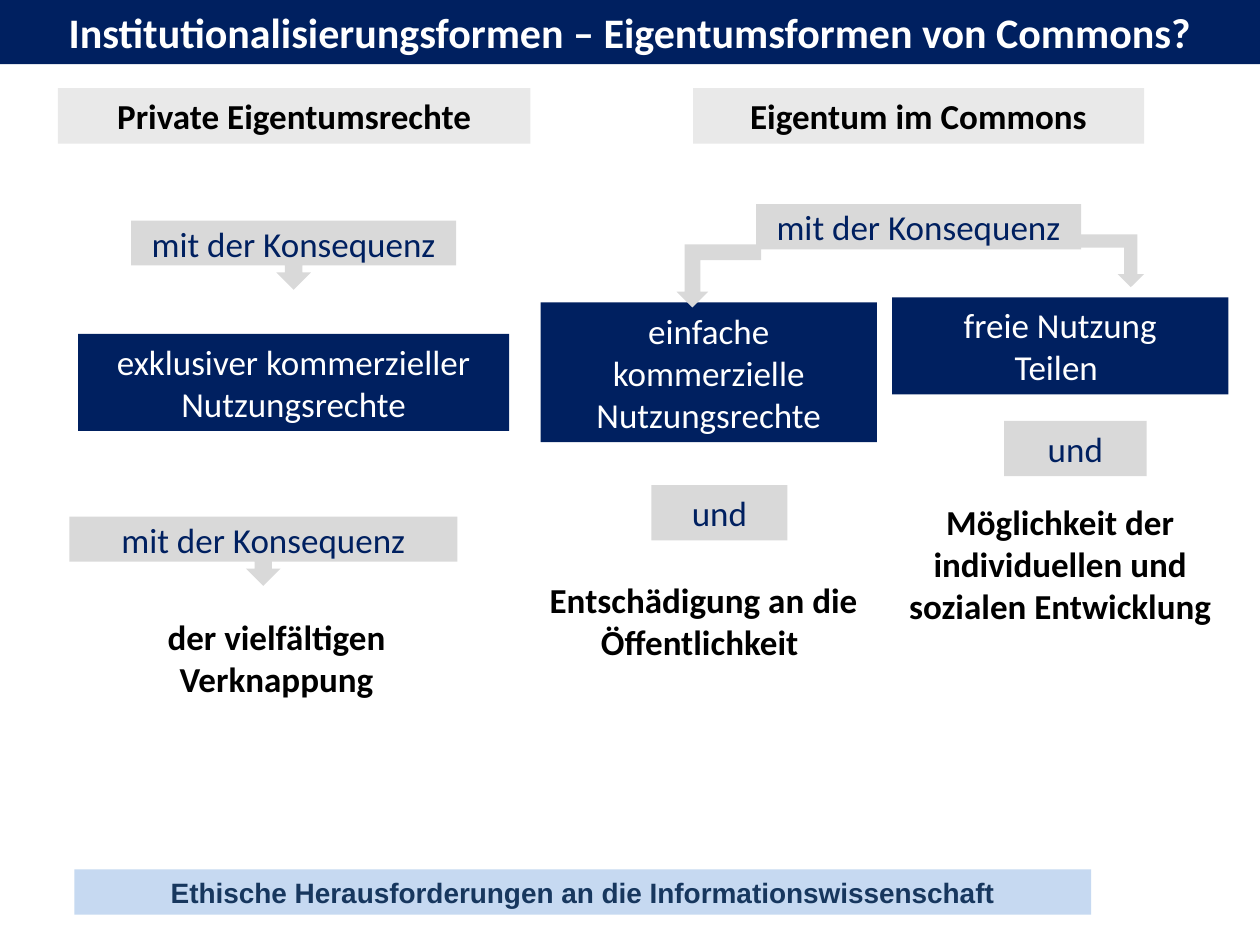
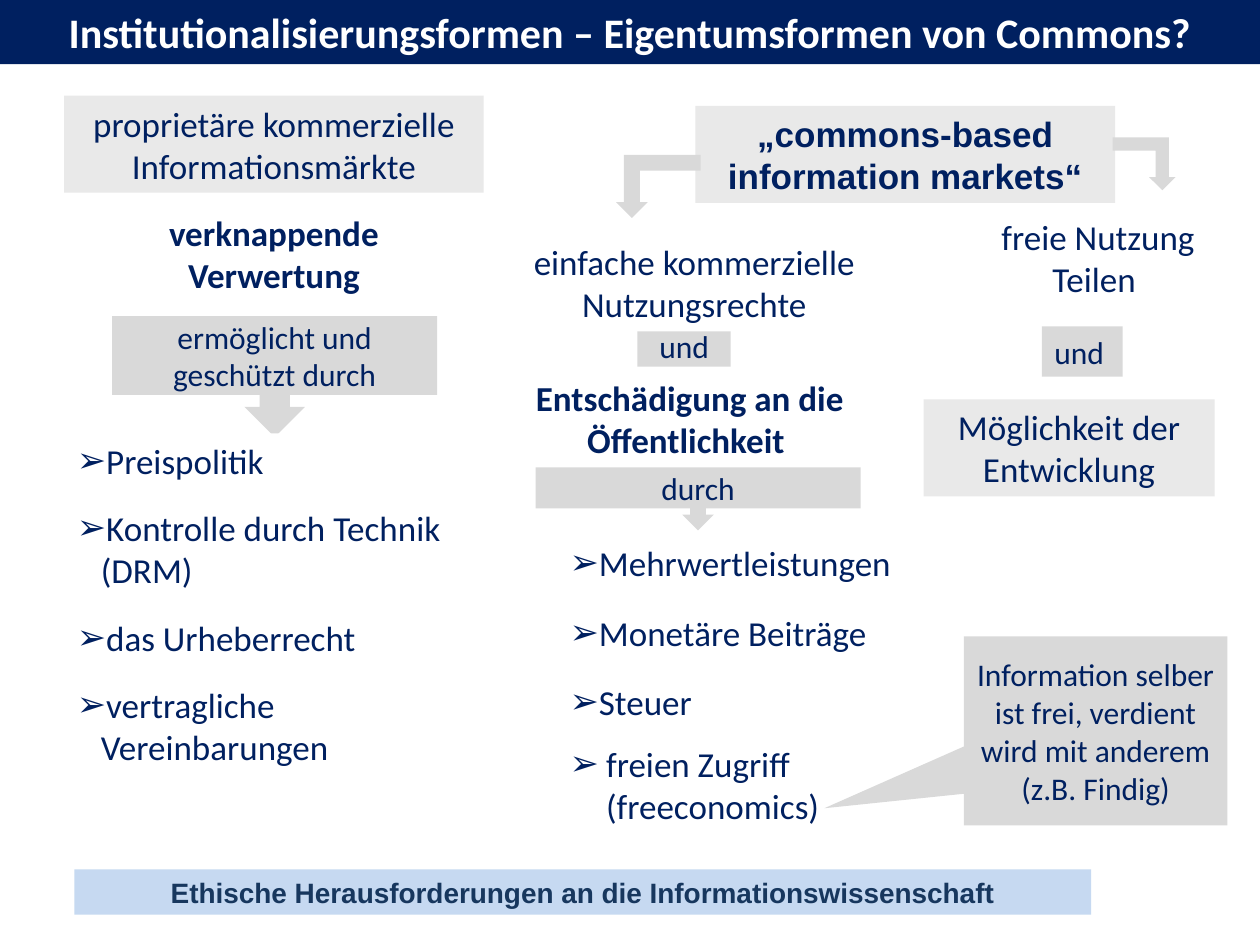
from dataclasses import dataclass

from lxml.etree import SubElement
from pptx import Presentation
from pptx.dml.color import RGBColor
from pptx.enum.shapes import MSO_SHAPE as Shape
from pptx.enum.text import MSO_ANCHOR as Anchor, MSO_AUTO_SIZE as AutoSize, PP_ALIGN as Align
from pptx.oxml.ns import qn
from pptx.util import Inches, Pt


@dataclass(frozen=True)
class Theme:
    navy: str = "002060"
    white: str = "FFFFFF"
    black: str = "000000"
    heading_grey: str = "E9E9E9"
    link_grey: str = "D9D9D9"
    footer_fill: str = "C6D9F1"
    footer_text: str = "17375E"
    body_font: str = "Calibri"
    footer_font: str = "Arial"
    title_size: int = 24
    body_size: int = 20
    link_size: int = 18
    footer_size: int = 16


theme = Theme()
TITLE = "Institutionalisierungsformen – Eigentumsformen von Commons?"
FOOTER = "Ethische Herausforderungen an die Informationswissenschaft"
TIGHT = (0.02, 0.01)
LOOSE = (0.1, 0.05)


def write(shape, lines, color=theme.navy, size=theme.body_size, bold=False,
          font=theme.body_font, align=Align.CENTER, inset=LOOSE):
    """Fill the text frame of a shape with one paragraph per line."""
    frame = shape.text_frame
    frame.word_wrap = True
    frame.auto_size = AutoSize.NONE
    frame.vertical_anchor = Anchor.MIDDLE
    frame.margin_left = frame.margin_right = Inches(inset[0])
    frame.margin_top = frame.margin_bottom = Inches(inset[1])
    frame.text = "\n".join(lines)
    for para in frame.paragraphs:
        para.alignment = align
        para.space_before = Pt(0)
        para.font.name = font
        para.font.size = Pt(size)
        para.font.bold = bold
        para.font.color.rgb = RGBColor.from_string(color)


def add_box(page, place, fill, text="", kind=Shape.RECTANGLE, **style):
    box = page.shapes.add_shape(kind, *map(Inches, place))
    box.shadow.inherit = False
    box.line.fill.background()
    box.fill.solid()
    box.fill.fore_color.rgb = RGBColor.from_string(fill)
    if text:
        write(box, text.split("\n"), **style)
    return box


deck = Presentation()
deck.slide_width, deck.slide_height = Inches(10), Inches(7.5)
TWO_CONTENT, TITLE_ONLY = deck.slide_layouts[3], deck.slide_layouts[5]
rights_page = deck.slides.add_slide(TITLE_ONLY)
markets_page = deck.slides.add_slide(TWO_CONTENT)

# Shared title band and footer band
for page in (rights_page, markets_page):
    title = page.shapes.title
    title.left, title.top, title.width, title.height = map(Inches, (0, 0, 10, 0.51))
    title.fill.solid()
    title.fill.fore_color.rgb = RGBColor.from_string(theme.navy)
    write(title, [TITLE], theme.white, theme.title_size, bold=True)
    add_box(page, (0.59, 6.9, 8.07, 0.36), theme.footer_fill, FOOTER, color=theme.footer_text,
            size=theme.footer_size, bold=True, font=theme.footer_font, inset=(0, 0))

# Slide 1: property rights
for place, text in (
    ((0.46, 0.7, 3.75, 0.44), "Private Eigentumsrechte"),
    ((5.5, 0.7, 3.58, 0.44), "Eigentum im Commons"),
):
    add_box(rights_page, place, theme.heading_grey, text, color=theme.black, bold=True)

for place, text in (
    ((0.62, 2.65, 3.42, 0.77), "exklusiver kommerzieller Nutzungsrechte"),
    ((4.29, 2.4, 2.67, 1.11), "einfache kommerzielle Nutzungsrechte"),
    ((7.08, 2.36, 2.67, 0.77), "freie Nutzung\nTeilen "),
):
    add_box(rights_page, place, theme.navy, text, color=theme.white)

for place, text in (
    ((0.78, 4.83, 2.83, 0.77), "der vielfältigen Verknappung"),
    ((4.25, 4.54, 2.67, 0.77), "Entschädigung an die Öffentlichkeit "),
    ((7.08, 3.92, 2.67, 1.11), "Möglichkeit der individuellen und sozialen Entwicklung"),
):
    add_box(rights_page, place, theme.white, text, color=theme.black, bold=True)

for place, kind in (
    ((1.04, 1.75, 2.58, 0.55), Shape.DOWN_ARROW_CALLOUT),
    ((0.55, 4.1, 3.08, 0.55), Shape.DOWN_ARROW_CALLOUT),
    ((6, 1.62, 2.58, 0.36), Shape.RECTANGLE),
):
    add_box(rights_page, place, theme.link_grey, "mit der Konsequenz", kind, inset=TIGHT)

for place in ((5.17, 3.85, 1.08, 0.44), (7.97, 3.34, 1.13, 0.44)):
    add_box(rights_page, place, theme.link_grey, "und")

# Slide 2: information markets
for place, text, style in (
    ((0.51, 0.76, 3.33, 0.77), "proprietäre kommerzielle Informationsmärkte", {}),
    ((5.52, 0.84, 3.33, 0.77), "„commons-based information markets“",
     {"font": theme.footer_font, "bold": True}),
    ((7.33, 3.17, 2.31, 0.77), "Möglichkeit der Entwicklung", {}),
):
    add_box(markets_page, place, theme.heading_grey, text, **style)

for place, text, kind, style in (
    ((5.06, 2.58, 0.74, 0.33), "und", Shape.RECTANGLE, {"inset": TIGHT}),
    ((8.27, 2.59, 0.64, 0.4), "und", Shape.RECTANGLE, {"align": Align.LEFT}),
    ((0.89, 2.51, 2.58, 0.96), "ermöglicht und geschützt durch",
     Shape.DOWN_ARROW_CALLOUT, {"inset": TIGHT}),
    ((4.25, 3.71, 2.58, 0.5), "durch", Shape.DOWN_ARROW_CALLOUT, {"inset": TIGHT}),
):
    add_box(markets_page, place, theme.link_grey, text, kind, size=theme.link_size, **style)

for place, text, style in (
    ((0.76, 1.63, 2.83, 0.77), "verknappende Verwertung", {"bold": True}),
    ((3.95, 1.86, 3.12, 0.77), "einfache kommerzielle Nutzungsrechte", {}),
    ((4.14, 2.97, 2.67, 0.7), "Entschädigung an die Öffentlichkeit ",
     {"bold": True, "inset": TIGHT}),
    ((7.73, 1.66, 1.97, 0.77), "freie Nutzung\nTeilen ", {}),
):
    add_box(markets_page, place, theme.white, text, **style)

# Each list item: text, hanging indent in inches, space after in points
for holder_index, place, items in (
    (1, (0.51, 3.44, 3.33, 2.7), (
        ("Preispolitik", 0, 14),
        ("Kontrolle durch Technik (DRM)", 0.19, 15),
        ("das Urheberrecht", 0, 14),
        ("vertragliche Vereinbarungen", 0.19, 0))),
    (2, (4.42, 4.25, 2.91, 2.37), (
        ("Mehrwertleistungen", 0, 16),
        ("Monetäre Beiträge", 0, 15.5),
        ("Steuer", 0, 11),
        ("freien Zugriff (freeconomics)", 0.29, 0))),
):
    holder = markets_page.placeholders[holder_index]
    holder.left, holder.top, holder.width, holder.height = map(Inches, place)
    holder.fill.solid()
    holder.fill.fore_color.rgb = RGBColor.from_string(theme.white)
    write(holder, [text for text, _, _ in items], align=Align.LEFT)
    holder.text_frame.vertical_anchor = Anchor.TOP
    for para, (_, indent, gap) in zip(holder.text_frame.paragraphs, items):
        para.space_after = Pt(gap)
        props = para._p.get_or_add_pPr()
        props.set("marL", str(Inches(indent)))
        props.set("indent", str(-Inches(indent)))
        bullet = SubElement(props, qn("a:buChar"))
        bullet.set("char", "➢")
        props.find(qn("a:defRPr")).addprevious(bullet)
    # The list covers the tip of the arrow above it
    markets_page.shapes._spTree.append(holder._element)

callout = add_box(markets_page, (7.65, 5.05, 2.09, 1.5), theme.link_grey,
                  "Information selber ist frei, verdient wird mit anderem\n(z.B. Findig)",
                  Shape.RECTANGULAR_CALLOUT, size=theme.link_size)
callout.adjustments[0], callout.adjustments[1] = -1.03, 0.41

# Bent arrows lie over the boxes they join
for page, left_arrow, right_arrow in (
    (rights_page, (5.37, 1.94), (8.58, 1.86)),
    (markets_page, (4.89, 1.23), (8.83, 1.09)),
):
    arrow = add_box(page, (*left_arrow, 0.67, 0.5), theme.link_grey, kind=Shape.BENT_UP_ARROW)
    arrow.rotation = 180
    arrow = add_box(page, (*right_arrow, 0.5, 0.42), theme.link_grey, kind=Shape.BENT_UP_ARROW)
    arrow._element.spPr.find(qn("a:xfrm")).set("flipV", "1")

deck.save("out.pptx")
